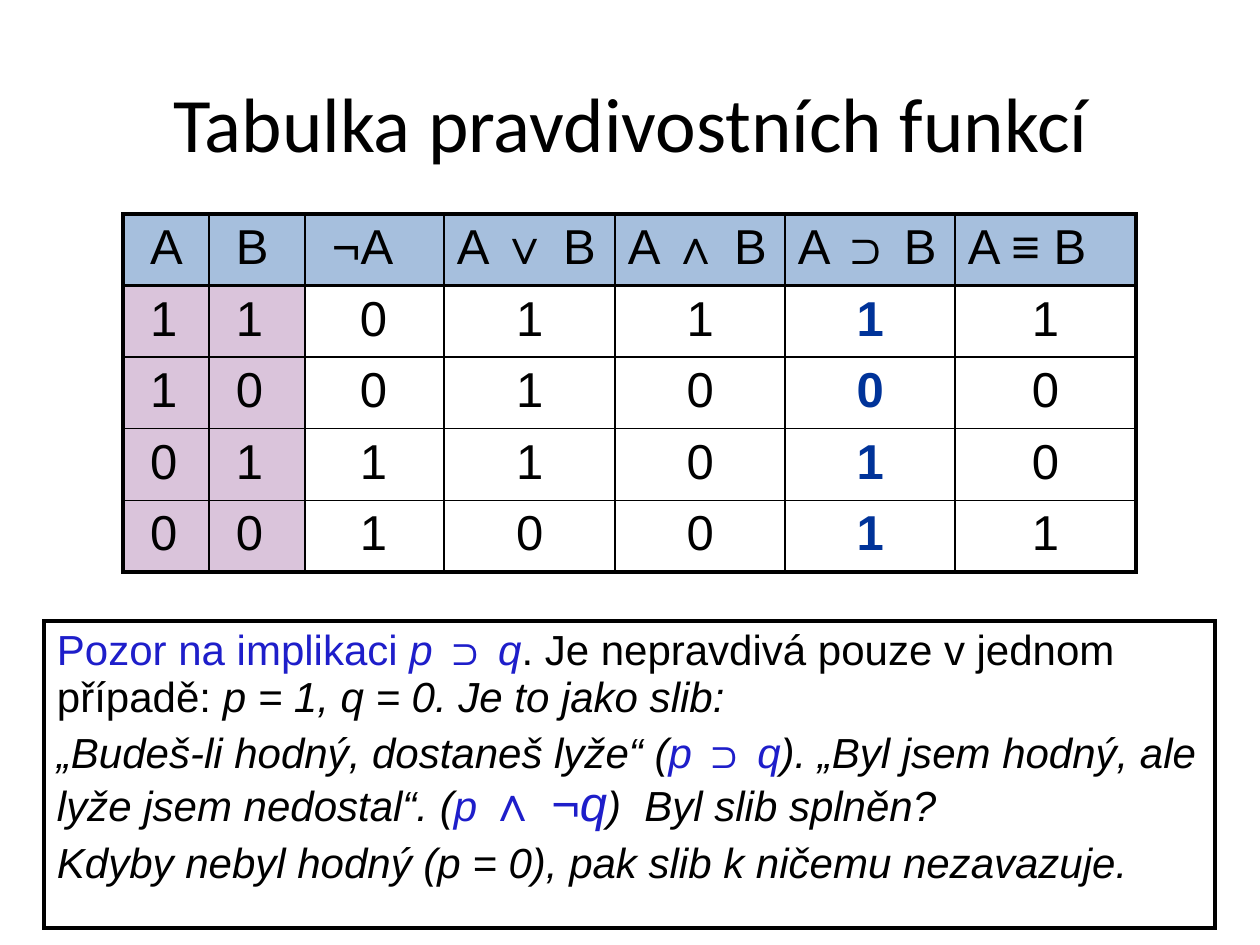
from lxml.etree import SubElement
from pptx import Presentation
from pptx.dml.color import RGBColor
from pptx.enum.text import MSO_ANCHOR, PP_ALIGN
from pptx.oxml.ns import qn
from pptx.util import Emu, Pt

SCALE = 914400 / 126
HEX = {"ink": "000000", "head": "4F81BD", "input": "DAC4DB",
       "key": "003399", "note": "1E1ECA"}
THICK, THIN = 2.25, 1
INSET, SPACE = 13, 14


def px(n):
    return Emu(round(n * SCALE))


class Deck:
    def __init__(self, wide, high):
        self.prs = Presentation()
        self.prs.slide_width, self.prs.slide_height = px(wide), px(high)
        self.slide = self.prs.slides.add_slide(self.prs.slide_layouts[6])

    def run(self, para, text, size, color="ink", style="", font="Arial"):
        run = para.add_run()
        run.text = text
        run.font.name, run.font.size = font, Pt(size)
        run.font.bold, run.font.italic = "b" in style, "i" in style
        run.font.color.rgb = RGBColor.from_string(HEX[color])

    def title(self, box, text):
        frame = self.slide.shapes.add_textbox(*map(px, box)).text_frame
        frame.word_wrap = True
        frame.vertical_anchor = MSO_ANCHOR.MIDDLE
        para = frame.paragraphs[0]
        para.alignment = PP_ALIGN.CENTER
        self.run(para, text, 44, font="Calibri")

    def table(self, left, top, cols, rows, high):
        shape = self.slide.shapes.add_table(
            rows, len(cols), px(left), px(top), px(sum(cols)), px(high))
        table = shape.table
        table.first_row = table.horz_banding = False
        for col, wide in zip(table.columns, cols):
            col.width = px(wide)
        for row in table.rows:
            row.height = px(high / rows)
        return table

    def cell(self, cell, paras, lines, fill=None, alpha=None,
             align=PP_ALIGN.LEFT, indent=0):
        cell.margin_left = px(INSET + indent)
        # Borders come before the fill in the cell properties
        props = cell._tc.get_or_add_tcPr()
        for side, width in zip("LRTB", lines):
            line = SubElement(props, qn("a:ln" + side), w=str(Pt(width)))
            solid = SubElement(line, qn("a:solidFill"))
            SubElement(solid, qn("a:srgbClr"), val=HEX["ink"])
        if fill:
            cell.fill.solid()
            cell.fill.fore_color.rgb = RGBColor.from_string(HEX[fill])
            if alpha:
                color = props.find(".//" + qn("a:solidFill") + "[last()]")
                color = props.find(qn("a:solidFill"))[0]
                SubElement(color, qn("a:alpha"), val=str(alpha * 1000))
        else:
            cell.fill.background()
        frame = cell.text_frame
        for n, runs in enumerate(paras):
            para = frame.add_paragraph() if n else frame.paragraphs[0]
            para.alignment = align
            gap = SubElement(para._p.get_or_add_pPr(), qn("a:spcBef"))
            SubElement(gap, qn("a:spcPct"), val="20000")
            for part in runs:
                self.run(para, *part)


def truth(deck):
    heads = ["A", "B", "¬A", "A ∨ B", "A ∧ B", "A ⊃ B", "A ≡ B"]
    pairs = [(1, 1), (1, 0), (0, 1), (0, 0)]
    rows = [(a, b, 1 - a, a | b, a & b, int(a <= b), int(a == b))
            for a, b in pairs]
    cols = [86, 96, 139, 171, 170, 170, 181]
    table = deck.table(123, 214, cols, len(rows) + 1, 358)

    def lines(r, c):
        return (THIN if c else THICK,
                THICK if c == len(cols) - 1 else THIN,
                THICK if r < 2 else THIN,
                THICK if r in (0, len(rows)) else THIN)

    # Header row, with the operator in bold
    for c, head in enumerate(heads):
        if " " in head:
            a, sign, b = head.split()
            runs = [(a + " ", 28), (sign, 28, "ink", "b"), (" " + b, 28)]
        else:
            runs = [(head, 28)]
        deck.cell(table.cell(0, c), [runs], lines(0, c), "head", 50,
                  indent=SPACE if c < 3 else 0)

    # Values, with implication picked out
    for r, row in enumerate(rows, 1):
        for c, value in enumerate(row):
            look = ("key", "b") if c == 5 else ("ink", "")
            deck.cell(table.cell(r, c), [[(str(value), 28, *look)]],
                      lines(r, c), "input" if c < 2 else None,
                      align=PP_ALIGN.LEFT if c < 3 else PP_ALIGN.CENTER,
                      indent=(SPACE, SPACE, 3 * SPACE)[c] if c < 3 else 0)


def note(deck):
    rule = [("p ", 24, "note", "i"), ("⊃ ", 24, "note", "b"),
            ("q", 24, "note", "i")]
    paras = [
        [("Pozor na implikaci ", 24, "note"), *rule,
         (". Je nepravdivá pouze v jednom případě: ", 24),
         ("p = 1, q = 0. Je to jako slib:", 24, "ink", "i")],
        [("„Budeš-li hodný, dostaneš lyže“ (", 24, "ink", "i"), *rule,
         ("). „Byl jsem hodný, ale lyže jsem nedostal“. (", 24, "ink", "i"),
         ("p ", 24, "note", "i"), ("∧ ", 28, "note", "b"),
         ("¬", 28, "note"), ("q", 28, "note", "i"),
         (")  Byl slib splněn?", 24, "ink", "i")],
        [("Kdyby nebyl hodný (p = 0), pak slib k ničemu nezavazuje.",
          24, "ink", "i")],
    ]
    table = deck.table(44, 621, [1171], 1, 307)
    deck.cell(table.cell(0, 0), paras, [THICK] * 4)


def main():
    deck = Deck(1260, 945)
    deck.title((64, 55, 1134, 134), "Tabulka pravdivostních funkcí")
    truth(deck)
    note(deck)
    deck.prs.save("out.pptx")


if __name__ == "__main__":
    main()
